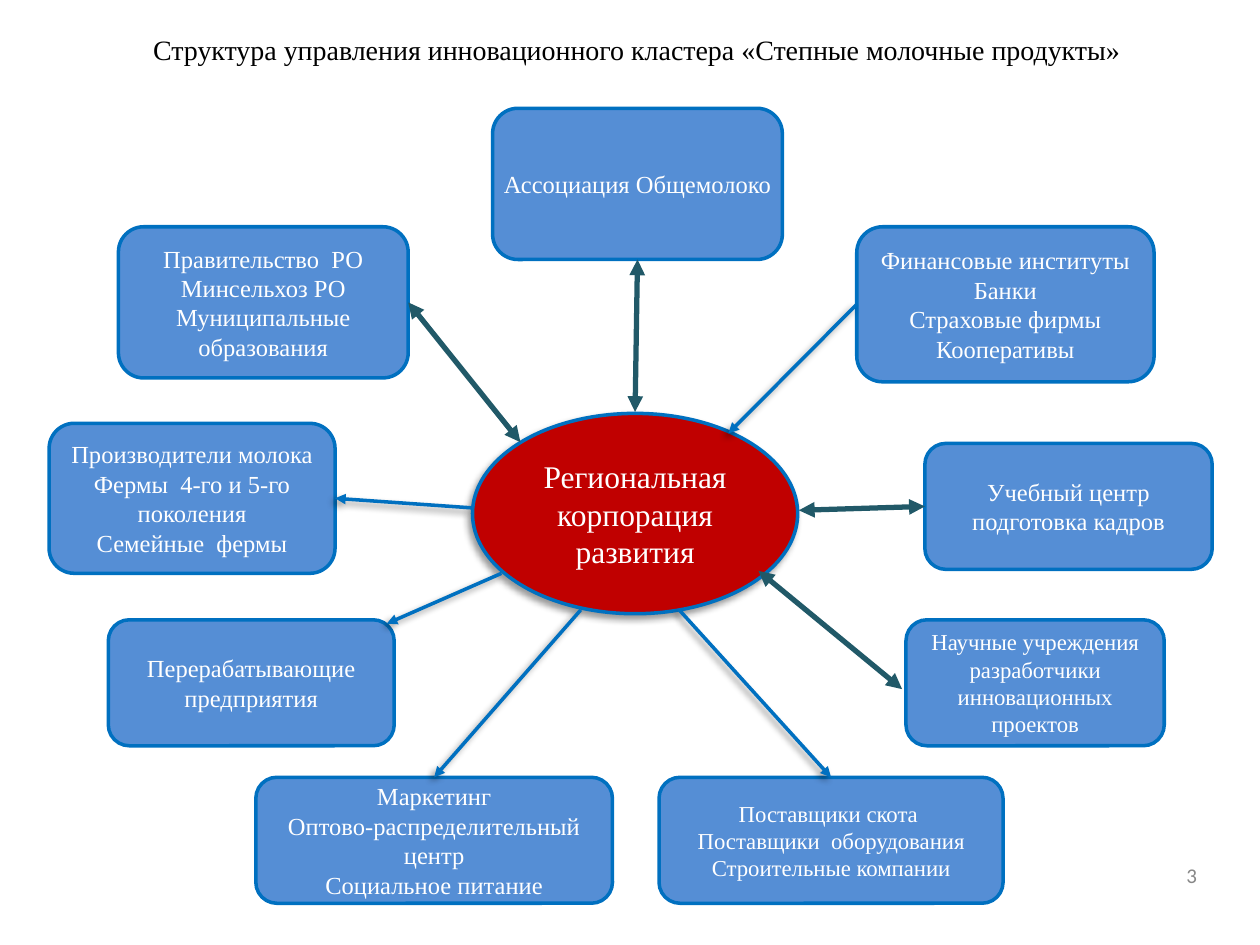
from dataclasses import dataclass
from typing import Optional

from lxml import etree
from pptx import Presentation
from pptx import util as u
from pptx.dml.color import RGBColor
from pptx.enum import shapes, text
from pptx.oxml import ns

WHITE = RGBColor(0xFF, 0xFF, 0xFF)
BLACK = RGBColor(0x00, 0x00, 0x00)
GRAY = RGBColor(0x88, 0x88, 0x88)
BOX_BLUE = RGBColor(0x55, 0x8E, 0xD5)
LINE_BLUE = RGBColor(0x00, 0x70, 0xC0)
TEAL = RGBColor(0x21, 0x59, 0x68)
RED = RGBColor(0xC0, 0x00, 0x00)
SERIF = "Times New Roman"
TOP, LEFT, BOTTOM, RIGHT = range(4)


@dataclass
class Node:
    left: float
    top: float
    width: float
    height: float
    lines: tuple[str, ...]
    size: float = 14
    font: str = SERIF
    color: RGBColor = WHITE
    align: text.PP_ALIGN = text.PP_ALIGN.CENTER

    def frame(self) -> tuple:
        return tuple(u.Pt(v) for v in (self.left, self.top, self.width, self.height))


@dataclass
class Link:
    start: tuple[float, float]
    target: str
    side: Optional[int] = None
    end: tuple[float, float] = (0, 0)
    two_way: bool = False


HUB = Node(270, 236.2, 185.8, 114.5, ("Региональная корпорация развития",), 18)
TITLE = Node(7.9, 15.8, 712.1, 24.5,
             ("Структура управления инновационного кластера «Степные молочные продукты»",),
             16, color=BLACK)
PAGE_NUMBER = Node(516.2, 489.6, 167.8, 20.9, ("3",), 12, "Calibri", GRAY,
                   text.PP_ALIGN.RIGHT)

MEMBERS = {
    "finance": Node(489.6, 129.6, 169.9, 88.6, (
        "Финансовые институты", "Банки", "Страховые фирмы", "Кооперативы")),
    "training": Node(528.5, 253.4, 164.2, 72, ("Учебный центр", "подготовка кадров")),
    "science": Node(517.7, 354.2, 147.6, 72, (
        "Научные учреждения", "разработчики инновационных проектов"), 13),
    "processing": Node(61.9, 354.2, 163.4, 72, ("Перерабатывающие предприятия",)),
    "producers": Node(28.1, 241.9, 163.4, 85.7, (
        "Производители молока", "Фермы  4-го и 5-го поколения", "Семейные  фермы")),
    "government": Node(67.7, 129.6, 165.6, 86.4, (
        "Правительство  РО", "Минсельхоз РО", "Муниципальные образования")),
    "marketing": Node(146.2, 444.2, 203.8, 72, (
        "Маркетинг", "Оптово-распределительный центр", "Социальное питание")),
    "association": Node(281.5, 61.9, 165.6, 86.4, ("Ассоциация Общемолоко",)),
    "suppliers": Node(376.6, 444.2, 196.6, 72, (
        "Поставщики скота ", "Поставщики  оборудования", "Строительные компании"), 13),
}

LINKS = (
    Link((362.9, 235.4), "association", BOTTOM, two_way=True),
    Link((297.4, 252.7), "government", RIGHT, two_way=True),
    Link((456.5, 291.6), "training", LEFT, two_way=True),
    Link((433.4, 326.2), "science", end=(515.5, 393.8), two_way=True),
    Link((269.3, 290.2), "producers", RIGHT),
    Link((286.6, 327.6), "processing", end=(221, 356.4)),
    Link((331.9, 348.5), "marketing", TOP),
    Link((388.1, 348.5), "suppliers", TOP),
)
FINANCE_LINK = Link((489.6, 173.9), "finance", LEFT, end=(416.2, 247.7))


def write_text(shape, node: Node) -> None:
    frame = shape.text_frame
    frame.word_wrap = True
    frame.vertical_anchor = text.MSO_ANCHOR.MIDDLE
    frame.margin_left = frame.margin_right = frame.margin_top = frame.margin_bottom = 0
    for index, line in enumerate(node.lines):
        paragraph = frame.paragraphs[0] if index == 0 else frame.add_paragraph()
        paragraph.alignment = node.align
        run = paragraph.add_run()
        run.text = line
        run.font.name = node.font
        run.font.size = u.Pt(node.size)
        run.font.color.rgb = node.color


def set_effects(shape, shadow: bool) -> None:
    properties = shape._element.spPr
    for old in properties.findall(ns.qn("a:effectLst")):
        properties.remove(old)
    effects = etree.SubElement(properties, ns.qn("a:effectLst"))
    if shadow:
        outer = etree.SubElement(effects, ns.qn("a:outerShdw"), blurRad=str(u.Pt(4)),
                                 dist=str(u.Pt(3)), dir=str(135 * 60000),
                                 algn="ctr", rotWithShape="0")
        color = etree.SubElement(outer, ns.qn("a:srgbClr"), val=str(BLACK))
        etree.SubElement(color, ns.qn("a:alpha"), val="40000")


def add_node(slide, node: Node, kind: shapes.MSO_SHAPE, fill: RGBColor, shadow: bool = False):
    shape = slide.shapes.add_shape(kind, *node.frame())
    shape.fill.solid()
    shape.fill.fore_color.rgb = fill
    shape.line.color.rgb = LINE_BLUE
    shape.line.width = u.Pt(2)
    shape.shadow.inherit = False
    set_effects(shape, shadow)
    write_text(shape, node)
    return shape


def add_label(slide, node: Node) -> None:
    write_text(slide.shapes.add_textbox(*node.frame()), node)


def add_link(slide, link: Link, boxes: dict) -> None:
    points = [u.Pt(v) for v in link.start + link.end]
    connector = slide.shapes.add_connector(shapes.MSO_CONNECTOR.STRAIGHT, *points)
    if link is FINANCE_LINK:
        connector.begin_connect(boxes[link.target], link.side)
    elif link.side is not None:
        connector.end_connect(boxes[link.target], link.side)
    connector.line.color.rgb = TEAL if link.two_way else LINE_BLUE
    connector.line.width = u.Pt(3 if link.two_way else 2)
    line = connector.line._get_or_add_ln()
    for tag in ("a:headEnd", "a:tailEnd") if link.two_way else ("a:tailEnd",):
        etree.SubElement(line, ns.qn(tag), type="triangle")
    set_effects(connector, not link.two_way)


def main() -> None:
    presentation = Presentation()
    presentation.slide_width, presentation.slide_height = u.Pt(720), u.Pt(540)
    slide = presentation.slides.add_slide(presentation.slide_layouts[6])
    add_label(slide, TITLE)
    boxes = {name: add_node(slide, node, shapes.MSO_SHAPE.ROUNDED_RECTANGLE, BOX_BLUE)
             for name, node in MEMBERS.items()}
    add_node(slide, HUB, shapes.MSO_SHAPE.OVAL, RED, shadow=True)
    for link in LINKS + (FINANCE_LINK,):
        add_link(slide, link, boxes)
    add_label(slide, PAGE_NUMBER)
    presentation.save("out.pptx")


if __name__ == "__main__":
    main()
